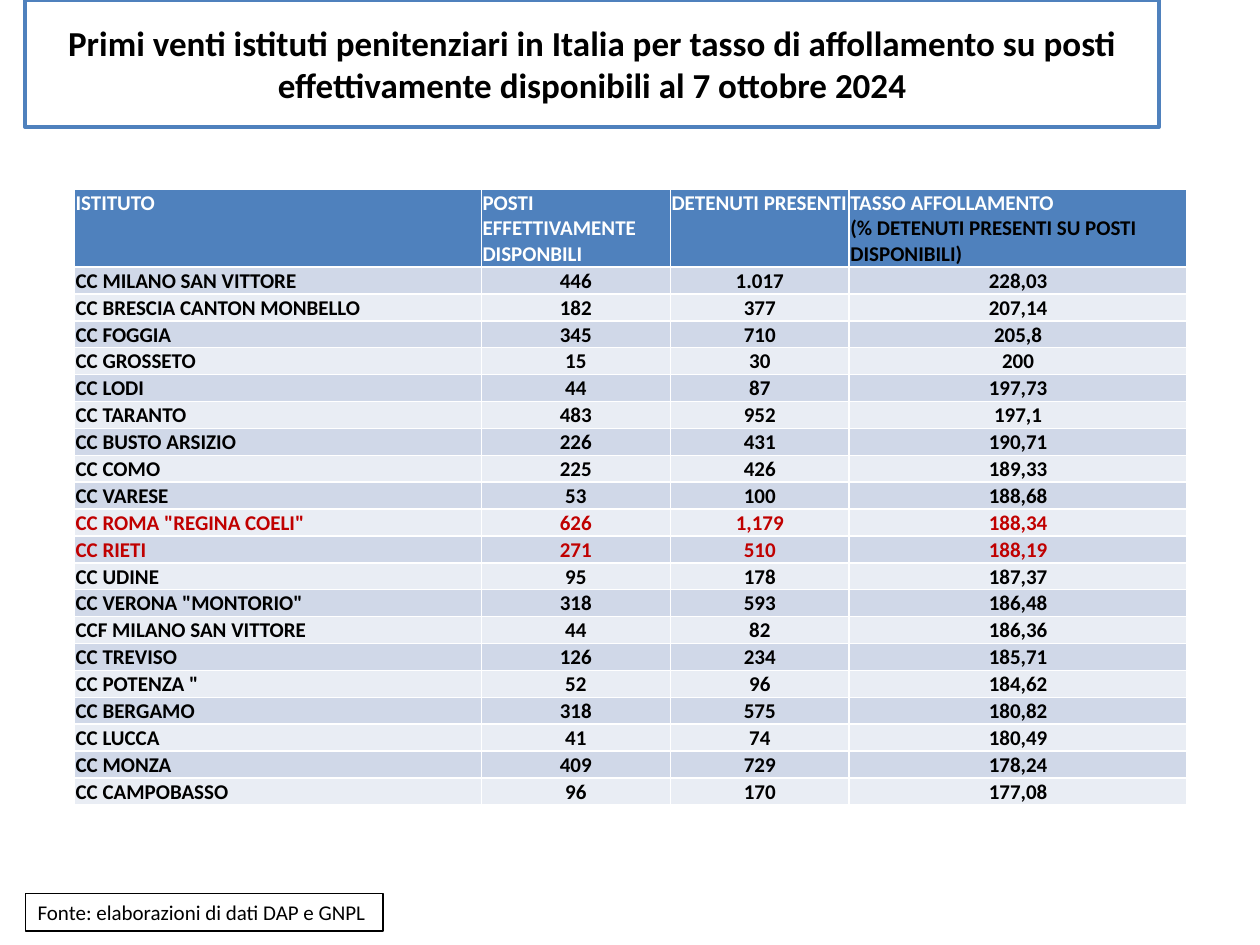
from pptx import Presentation
from pptx.dml.color import RGBColor
from pptx.enum.text import MSO_ANCHOR, PP_ALIGN
from pptx.util import Inches, Pt

LEFT, CENTER = PP_ALIGN.LEFT, PP_ALIGN.CENTER
TOP, MIDDLE = MSO_ANCHOR.TOP, MSO_ANCHOR.MIDDLE

THEME = {
    "font": "Calibri", "title": 20, "body": 12,
    "black": "000000", "white": "FFFFFF", "red": "C00000",
    "blue": "4F81BD", "bands": ("D0D8E8", "E9EDF4"),
}

TITLE = ("Primi venti istituti penitenziari in Italia per tasso di affollamento "
         "su posti effettivamente disponibili al 7 ottobre 2024")
SOURCE = "Fonte: elaborazioni di dati DAP e GNPL"
HEAD = [
    [("ISTITUTO", "white")],
    [("POSTI EFFETTIVAMENTE DISPONBILI", "white")],
    [("DETENUTI PRESENTI", "white")],
    [("TASSO AFFOLLAMENTO", "white"),
     ("(% DETENUTI PRESENTI SU POSTI DISPONIBILI)", "black")],
]
JAILS = [
    ("CC MILANO SAN VITTORE", "446", "1.017", "228,03"),
    ("CC BRESCIA CANTON MONBELLO", "182", "377", "207,14"),
    ("CC FOGGIA", "345", "710", "205,8"),
    ("CC GROSSETO", "15", "30", "200"),
    ("CC LODI", "44", "87", "197,73"),
    ("CC TARANTO", "483", "952", "197,1"),
    ("CC BUSTO ARSIZIO", "226", "431", "190,71"),
    ("CC COMO", "225", "426", "189,33"),
    ("CC VARESE", "53", "100", "188,68"),
    ('CC ROMA "REGINA COELI"', "626", "1,179", "188,34"),
    ("CC RIETI", "271", "510", "188,19"),
    ("CC UDINE", "95", "178", "187,37"),
    ('CC VERONA "MONTORIO"', "318", "593", "186,48"),
    ("CCF MILANO SAN VITTORE", "44", "82", "186,36"),
    ("CC TREVISO", "126", "234", "185,71"),
    ('CC POTENZA "', "52", "96", "184,62"),
    ("CC BERGAMO", "318", "575", "180,82"),
    ("CC LUCCA", "41", "74", "180,49"),
    ("CC MONZA", "409", "729", "178,24"),
    ("CC CAMPOBASSO", "96", "170", "177,08"),
]
LAZIO = ('CC ROMA "REGINA COELI"', "CC RIETI")
COLS = (3.23, 1.5, 1.42, 2.68)
HEAD_H, ROW_H = 0.6, 0.21


def paint(item, color):
    item.fill.solid()
    item.fill.fore_color.rgb = RGBColor.from_string(color)


def outline(shape, color, width):
    shape.line.color.rgb = RGBColor.from_string(color)
    shape.line.width = Pt(width)


def write(frame, lines, size, bold=True, align=LEFT):
    """Write (text, colour name) pairs, one paragraph each."""
    for i, (text, color) in enumerate(lines):
        para = frame.add_paragraph() if i else frame.paragraphs[0]
        para.alignment = align
        run = para.add_run()
        run.text = text
        font = run.font
        font.name, font.size, font.bold = THEME["font"], Pt(size), bold
        font.color.rgb = RGBColor.from_string(THEME[color])


def fill_cell(cell, lines, color, align):
    paint(cell, color)
    cell.margin_left = cell.margin_right = cell.margin_top = Inches(0.01)
    cell.margin_bottom = 0
    cell.vertical_anchor = TOP
    write(cell.text_frame, lines, THEME["body"], align=align)


def add_title(slide):
    title = slide.shapes.title
    title.left, title.top = Inches(0.2), Inches(0)
    title.width, title.height = Inches(9), Inches(1.01)
    paint(title, THEME["white"])
    outline(title, THEME["blue"], 2)
    title.text_frame.vertical_anchor = MIDDLE
    write(title.text_frame, [(TITLE, "black")], THEME["title"], align=CENTER)


def add_jails(slide):
    count = len(JAILS) + 1
    table = slide.shapes.add_table(
        count, len(COLS), Inches(0.59), Inches(1.5), Inches(sum(COLS)),
        Inches(HEAD_H + ROW_H * len(JAILS))).table
    for col, width in zip(table.columns, COLS):
        col.width = Inches(width)
    for r, row in enumerate(table.rows):
        row.height = Inches(ROW_H if r else HEAD_H)
    for c, lines in enumerate(HEAD):
        fill_cell(table.cell(0, c), lines, THEME["blue"], LEFT)
    for r, jail in enumerate(JAILS):
        color = "red" if jail[0] in LAZIO else "black"
        for c, text in enumerate(jail):
            fill_cell(table.cell(r + 1, c), [(text, color)],
                      THEME["bands"][r % 2], CENTER if c else LEFT)


def add_source(slide):
    box = slide.shapes.add_textbox(
        Inches(0.2), Inches(7.09), Inches(2.84), Inches(0.3))
    paint(box, THEME["white"])
    outline(box, THEME["black"], 0.75)
    box.text_frame.word_wrap = False
    write(box.text_frame, [(SOURCE, "black")], THEME["body"], bold=False)


def main():
    deck = Presentation()
    deck.slide_width, deck.slide_height = Inches(10), Inches(7.5)
    slide = deck.slides.add_slide(deck.slide_layouts[5])
    add_title(slide)
    add_jails(slide)
    add_source(slide)
    deck.save("out.pptx")


if __name__ == "__main__":
    main()
